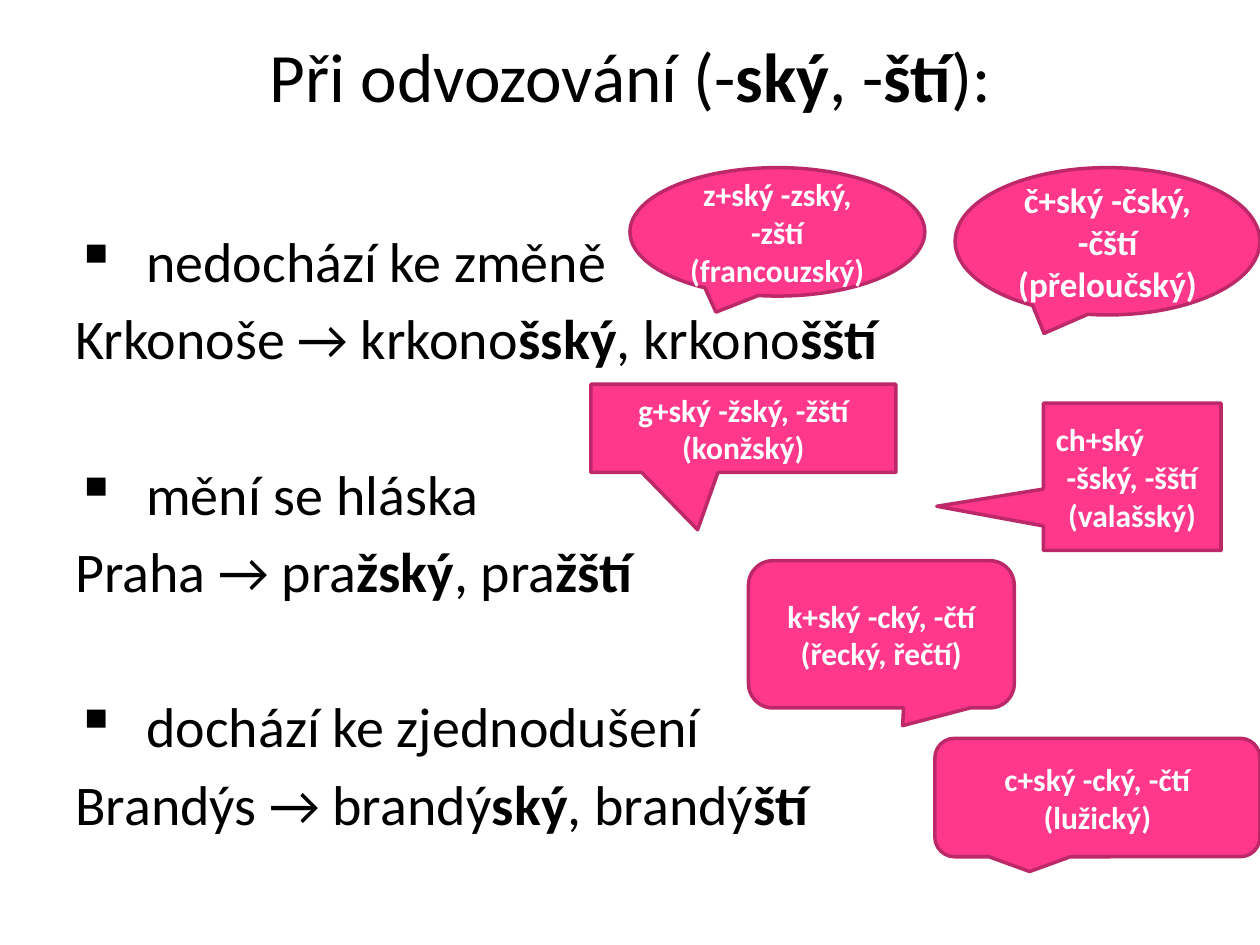
from pptx import Presentation
from pptx.dml.color import RGBColor
from pptx.enum.shapes import MSO_SHAPE
from pptx.enum.text import MSO_ANCHOR, PP_ALIGN
from pptx.oxml.ns import qn
from pptx.util import Pt
from lxml import etree

BLACK = RGBColor(0x00, 0x00, 0x00)
WHITE = RGBColor(0xFF, 0xFF, 0xFF)
PINK = RGBColor(0xFF, 0x38, 0x8C)
DARK_PINK = RGBColor(0xBD, 0x29, 0x68)

FONT = "Calibri"
RULE_SIZE = 32
RULE_GAP = 5.7
GROUP_GAP = 50.4
INDENT = 40.5

# Asterisks enclose the bold endings
TITLE = "Při odvozování (-*ský*, -*ští*):"
RULES = [
    ("nedochází ke změně", "Krkonoše → krkono*šský*, krkono*šští*"),
    ("mění se hláska", "Praha → pra*žský*, pra*žští*"),
    ("dochází ke zjednodušení", "Brandýs → brandý*ský*, brandý*ští*"),
]


def set_font(paragraph, size, color, bold=None):
    font = paragraph.font
    font.name, font.size, font.bold = FONT, Pt(size), bold
    font.color.rgb = color


def add_marked_text(paragraph, marked):
    for index, part in enumerate(marked.split("*")):
        if part:
            run = paragraph.add_run()
            run.text = part
            if index % 2:
                run.font.bold = True


def add_text_frame(slide, left, top, width, height):
    box = slide.shapes.add_textbox(Pt(left), Pt(top), Pt(width), Pt(height))
    box.text_frame.word_wrap = True
    return box.text_frame


def add_bullet(paragraph):
    properties = paragraph._p.get_or_add_pPr()
    bullet = etree.Element(qn("a:buChar"), char="▪")
    properties.insert_element_before(bullet, "a:tabLst", "a:defRPr", "a:extLst")


def add_title(slide):
    frame = add_text_frame(slide, 36, 21.6, 648, 90)
    frame.vertical_anchor = MSO_ANCHOR.MIDDLE
    title = frame.paragraphs[0]
    title.alignment = PP_ALIGN.CENTER
    set_font(title, 39.6, BLACK)
    add_marked_text(title, TITLE)
    title.add_line_break()


def add_rules(slide):
    frame = add_text_frame(slide, 36, 126, 648, 356.4)
    for number, (rule, example) in enumerate(RULES):
        heading = frame.add_paragraph() if number else frame.paragraphs[0]
        sample = frame.add_paragraph()
        heading.space_before = Pt(GROUP_GAP if number else RULE_GAP)
        sample.space_before = Pt(RULE_GAP)
        for paragraph, text in ((heading, rule), (sample, example)):
            properties = paragraph._p.get_or_add_pPr()
            properties.set("marL", str(Pt(INDENT)))
            properties.set("indent", str(-Pt(INDENT)))
            set_font(paragraph, RULE_SIZE, BLACK)
            add_marked_text(paragraph, text)
        add_bullet(heading)


def add_callout(slide, kind, bounds, text, size=18, pointer=None):
    callout = slide.shapes.add_shape(kind, *map(Pt, bounds))
    callout.shadow.inherit = False
    callout.fill.solid()
    callout.fill.fore_color.rgb = PINK
    callout.line.color.rgb = DARK_PINK
    callout.line.width = Pt(2)
    for index, value in enumerate(pointer or ()):
        callout.adjustments[index] = value
    frame = callout.text_frame
    frame.word_wrap = True
    frame.vertical_anchor = MSO_ANCHOR.MIDDLE
    frame.text = text
    for paragraph in frame.paragraphs:
        paragraph.alignment = PP_ALIGN.CENTER
        set_font(paragraph, size, WHITE, True)
    return frame


def main():
    presentation = Presentation()
    presentation.slide_width, presentation.slide_height = Pt(720), Pt(540)
    slide = presentation.slides.add_slide(presentation.slide_layouts[6])

    add_title(slide)
    add_rules(slide)

    # Callouts for each consonant before the suffix
    ellipse = MSO_SHAPE.OVAL_CALLOUT
    rounded = MSO_SHAPE.ROUNDED_RECTANGULAR_CALLOUT
    rectangle = MSO_SHAPE.RECTANGULAR_CALLOUT
    add_callout(slide, ellipse, (545.8, 95.8, 174.2, 84.2),
                "č+ský -čský,\v-čští (přeloučský)", size=20)
    add_callout(slide, rounded, (427.7, 320.4, 151.9, 84.2),
                "k+ský -cký, -čtí (řecký, řečtí)", pointer=(0.08, 0.62))
    add_callout(slide, ellipse, (360, 95.8, 168.5, 73.4),
                "z+ský -zský,\v-zští (francouzský)")
    add_callout(slide, rounded, (534.2, 421.9, 185.8, 67.7),
                "c+ský -cký, -čtí (lužický)")
    add_callout(slide, rectangle, (337.7, 219.6, 174.2, 50.4),
                "g+ský -žský, -žští (konžský)", pointer=(-0.15, 1.15))
    valassky = add_callout(slide, rectangle, (596.2, 230.4, 101.5, 84.2),
                           "ch+ský\n-šský, -šští (valašský)", pointer=(-1.1, 0.2))
    valassky.paragraphs[0].alignment = PP_ALIGN.LEFT

    presentation.save("out.pptx")


if __name__ == "__main__":
    main()
